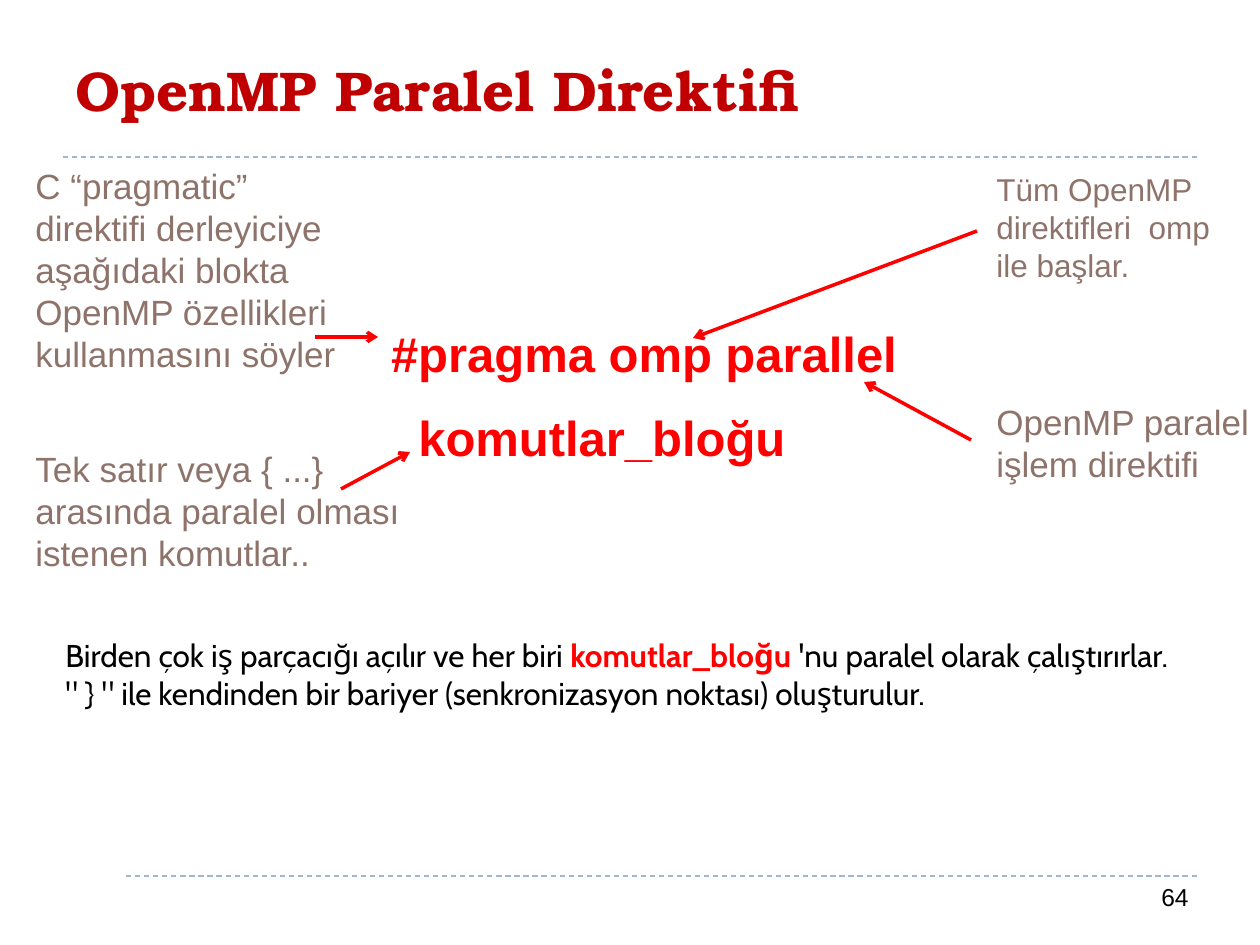
"""Build the slide about the OpenMP parallel directive."""
from dataclasses import dataclass

import lxml.etree
import pptx
import pptx.dml.color
import pptx.enum.dml
import pptx.enum.shapes
import pptx.enum.text
import pptx.oxml.ns
import pptx.util

EMU_PER_PX = 914400 / 126
RED = "FF0000"
BLACK = "000000"
BROWN = "8E736A"
RULE_COLOR = "9FB8CD"
ALIGN = pptx.enum.text.PP_ALIGN
ANCHOR = pptx.enum.text.MSO_ANCHOR


@dataclass
class Note:
    left: int
    top: int
    width: int
    height: int
    text: str
    size: int = 20


@dataclass
class Line:
    start: tuple[int, int]
    end: tuple[int, int]


NOTES = [
    Note(23, 158, 335, 224, "C “pragmatic” direktifi derleyiciye aşağıdaki blokta "
                            "OpenMP özellikleri kullanmasını söyler"),
    Note(984, 164, 283, 127, "Tüm OpenMP direktifleri  omp\nile başlar.", 18),
    Note(984, 394, 283, 97, "OpenMP paralel işlem direktifi"),
    Note(23, 441, 442, 140, "Tek satır veya { ...}\narasında paralel olması istenen komutlar.."),
]
RULES = [Line((63, 876), (1197, 876)), Line((63, 157), (1197, 157))]
ARROWS = [
    Line((315, 337), (378, 337)),
    Line((977, 231), (693, 338)),
    Line((971, 440), (864, 382)),
    Line((341, 489), (410, 452)),
]


def px(length: int) -> int:
    return pptx.util.Emu(round(length * EMU_PER_PX))


def rgb(value: str) -> pptx.dml.color.RGBColor:
    return pptx.dml.color.RGBColor.from_string(value)


def add_text(paragraph, text: str, *, size: float, color: str,
             font: str = "Arial", bold: bool = False) -> None:
    for index, part in enumerate(text.split("\n")):
        if index:
            paragraph.add_line_break()
        run = paragraph.add_run()
        run.text = part
        run.font.size = pptx.util.Pt(size)
        run.font.name = font
        run.font.bold = bold
        run.font.color.rgb = rgb(color)


def add_box(slide, left: int, top: int, width: int, height: int, anchor=ANCHOR.TOP):
    frame = slide.shapes.add_textbox(px(left), px(top), px(width), px(height)).text_frame
    frame.word_wrap = True
    frame.vertical_anchor = anchor
    return frame


def draw_note(slide, note: Note) -> None:
    frame = add_box(slide, note.left, note.top, note.width, note.height)
    add_text(frame.paragraphs[0], note.text, size=note.size, color=BROWN)


def draw_line(slide, line: Line, color: str, width: float):
    connector = slide.shapes.add_connector(
        pptx.enum.shapes.MSO_CONNECTOR.STRAIGHT, *map(px, line.start + line.end))
    connector.line.color.rgb = rgb(color)
    connector.line.width = pptx.util.Pt(width)
    lxml.etree.SubElement(connector._element.spPr, pptx.oxml.ns.qn("a:effectLst"))
    return connector


def draw_rule(slide, line: Line) -> None:
    connector = draw_line(slide, line, RULE_COLOR, 0.75)
    connector.line.dash_style = pptx.enum.dml.MSO_LINE.DASH


def draw_arrow(slide, line: Line) -> None:
    connector = draw_line(slide, line, RED, 2)
    outline = connector.line._get_or_add_ln()
    lxml.etree.SubElement(outline, pptx.oxml.ns.qn("a:tailEnd"), type="arrow")


def draw_corner(slide) -> None:
    shape = slide.shapes.add_shape(
        pptx.enum.shapes.MSO_SHAPE.RECTANGLE, px(44), px(859), px(79), px(79))
    shape.shadow.inherit = False
    shape.fill.solid()
    shape.fill.fore_color.rgb = rgb("FFFFFF")
    shape.line.fill.background()


def draw_title(slide) -> None:
    title = slide.shapes.title
    title.left, title.top, title.width, title.height = map(px, (63, 21, 1134, 136))
    frame = title.text_frame
    frame.auto_size = pptx.enum.text.MSO_AUTO_SIZE.NONE
    frame.vertical_anchor = ANCHOR.MIDDLE
    paragraph = frame.paragraphs[0]
    paragraph.alignment = ALIGN.LEFT
    add_text(paragraph, "OpenMP Paralel Direktifi", size=32, color="C00000",
             font="TeX Gyre Bonum", bold=True)


def draw_code(slide) -> None:
    frame = add_box(slide, 14, 318, 1260, 154, ANCHOR.MIDDLE)
    directive, block = frame.paragraphs[0], frame.add_paragraph()
    directive.alignment = ALIGN.CENTER
    block.space_before = pptx.util.Pt(14)
    block._p.get_or_add_pPr().set("marL", str(px(392)))
    add_text(directive, "#pragma omp parallel", size=28, color=RED, bold=True)
    add_text(block, "komutlar_bloğu", size=28, color=RED, bold=True)


def draw_explanation(slide) -> None:
    frame = add_box(slide, 53, 630, 1155, 217)
    plain = {"size": 18, "font": "Cabin", "color": BLACK}
    first, second = frame.paragraphs[0], frame.add_paragraph()
    add_text(first, "Birden çok iş parçacığı açılır ve her biri ", **plain)
    add_text(first, "komutlar_bloğu", size=18, font="Cabin", color=RED, bold=True)
    add_text(first, " 'nu paralel olarak çalıştırırlar.", **plain)
    add_text(second, '" } " ile kendinden bir bariyer (senkronizasyon noktası) oluşturulur.',
             **plain)


def draw_page_number(slide) -> None:
    paragraph = add_box(slide, 907, 876, 294, 50).paragraphs[0]
    paragraph.alignment = ALIGN.RIGHT
    add_text(paragraph, "64", size=14, color=BLACK)


def main() -> None:
    presentation = pptx.Presentation()
    presentation.slide_width, presentation.slide_height = px(1260), px(945)
    slide = presentation.slides.add_slide(presentation.slide_layouts[5])
    for rule in RULES:
        draw_rule(slide, rule)
    draw_corner(slide)
    draw_title(slide)
    draw_page_number(slide)
    draw_code(slide)
    for note in NOTES:
        draw_note(slide, note)
    draw_explanation(slide)
    for arrow in ARROWS:
        draw_arrow(slide, arrow)
    presentation.save("out.pptx")


if __name__ == "__main__":
    main()
